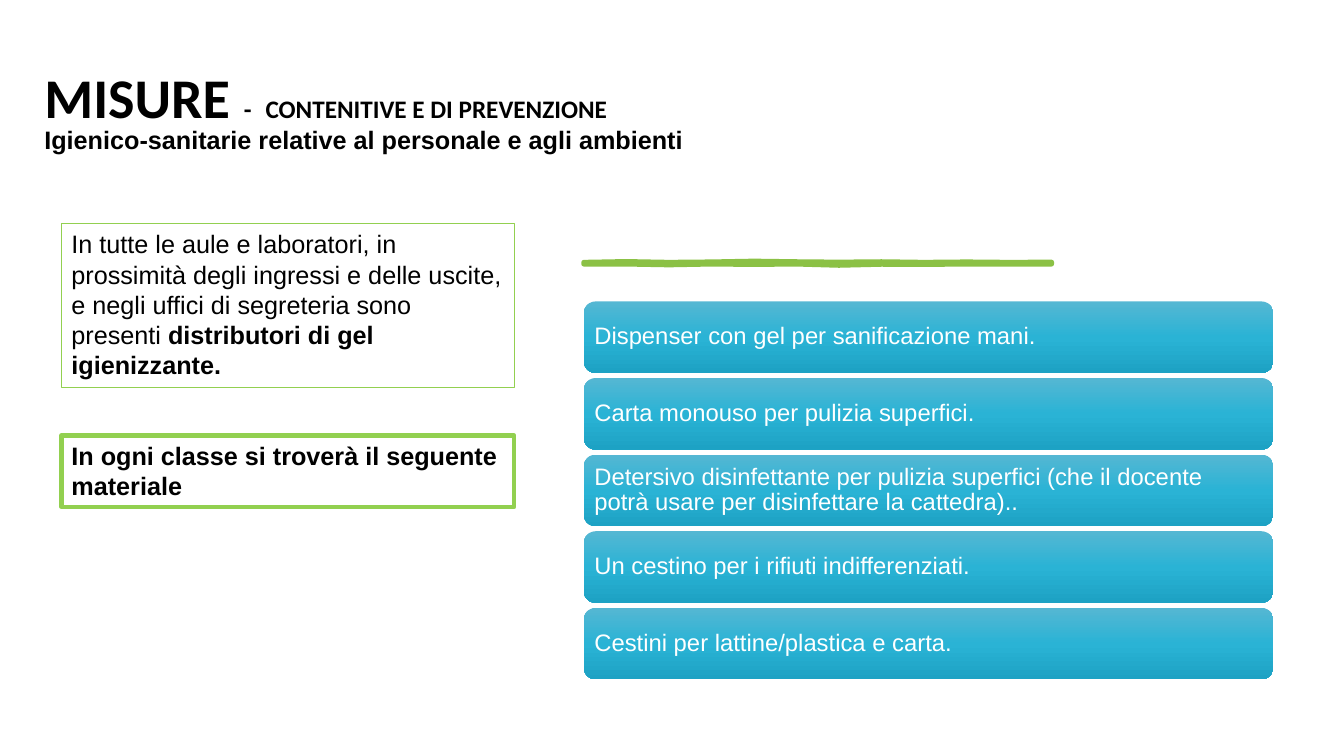
import copy

import pptx
import pptx.dml.color
import pptx.enum.shapes
import pptx.enum.text
import pptx.oxml.ns
import pptx.util
from pptx.util import Inches

COLORS = {
    "text": "000000",
    "white": "FFFFFF",
    "border": "92D050",
    "stroke": "8BC145",
    "card_top": "55B7D3",
    "card_middle": "2AB3D5",
    "card_bottom": "1DA2C4",
}
MATERIALS = [
    "Dispenser con gel per sanificazione mani.",
    "Carta monouso per pulizia superfici.",
    "Detersivo disinfettante per pulizia superfici (che il docente potrà usare per disinfettare la cattedra)..",
    "Un cestino per i rifiuti indifferenziati.",
    "Cestini per lattine/plastica e carta.",
]


def rgb(name):
    """Return the named palette colour."""
    return pptx.dml.color.RGBColor.from_string(COLORS[name])


def set_font(font, size, color="text", bold=False, name="Arial"):
    """Format a paragraph or run font."""
    font.name = name
    font.size = pptx.util.Pt(size)
    font.bold = bold
    font.color.rgb = rgb(color)


def place(shape, left, top, width, height):
    """Move a shape to the given box in inches."""
    shape.left, shape.top = Inches(left), Inches(top)
    shape.width, shape.height = Inches(width), Inches(height)


def add_title(slide, left, top, width, height):
    """Fill the title placeholder with the heading and its subtitle."""
    title = slide.shapes.title
    place(title, left, top, width, height)
    frame = title.text_frame
    frame.auto_size = pptx.enum.text.MSO_AUTO_SIZE.NONE
    frame.vertical_anchor = pptx.enum.text.MSO_ANCHOR.MIDDLE
    heading, subtitle = frame.paragraphs[0], frame.add_paragraph()
    for text, size in [("MISURE", 40), (" ", 44), ("-", 18), (" ", 44),
                       ("CONTENITIVE E DI PREVENZIONE", 18)]:
        run = heading.add_run()
        run.text = text
        set_font(run.font, size, bold=True, name="Calibri")
    subtitle.text = "Igienico-sanitarie relative al personale e agli ambienti"
    set_font(subtitle.font, 18, bold=True)
    for paragraph in frame.paragraphs:
        paragraph.alignment = pptx.enum.text.PP_ALIGN.LEFT
        paragraph.line_spacing = 0.8
        paragraph.space_before = pptx.util.Pt(0)


def add_note(slide, left, top, width, height, border, runs):
    """Add an outlined note whose runs are pairs of text and boldness."""
    note = slide.shapes.add_shape(
        pptx.enum.shapes.MSO_SHAPE.RECTANGLE,
        Inches(left), Inches(top), Inches(width), Inches(height))
    note.shadow.inherit = False
    note.fill.background()
    note.line.color.rgb = rgb("border")
    note.line.width = pptx.util.Pt(border)
    frame = note.text_frame
    frame.word_wrap = True
    frame.vertical_anchor = pptx.enum.text.MSO_ANCHOR.TOP
    paragraph = frame.paragraphs[0]
    paragraph.alignment = pptx.enum.text.PP_ALIGN.LEFT
    for text, bold in runs:
        run = paragraph.add_run()
        run.text = text
        set_font(run.font, 18, bold=bold)


def add_brush_stroke(slide, left, top, width, height):
    """Draw the uneven green rule."""
    upper = [0.1, -0.3, 0.1, -0.1, -0.5, -0.2, 0, -0.2, 0.1, -0.1, 0.1, 0]
    lower = [1, 1, 1.4, 1, 1.2, 1, 1.6, 1.1, 1.2, 1, 1, 1]
    step = width / (len(upper) - 1)
    edge = [(left + index * step, top + height * level)
            for index, level in enumerate(upper)]
    edge += [(left + index * step, top + height * level)
             for index, level in reversed(list(enumerate(lower)))]
    points = [(Inches(x), Inches(y)) for x, y in edge]
    builder = slide.shapes.build_freeform(*points[0])
    builder.add_line_segments(points[1:], close=True)
    stroke = builder.convert_to_shape()
    stroke.shadow.inherit = False
    stroke.fill.solid()
    stroke.fill.fore_color.rgb = rgb("stroke")
    stroke.line.color.rgb = rgb("stroke")
    stroke.line.width = pptx.util.Pt(3.5)


def fill_card(card):
    """Give a card its vertical gradient of three colours."""
    card.fill.gradient()
    card.fill.gradient_angle = 270
    stops = card._element.spPr.find(".//" + pptx.oxml.ns.qn("a:gsLst"))
    stops.insert(1, copy.deepcopy(stops[0]))
    names = ["card_top", "card_middle", "card_bottom"]
    for index, (stop, name) in enumerate(zip(card.fill.gradient_stops, names)):
        stop.position = index / 2
        stop.color.rgb = rgb(name)


def add_material_cards(slide, left, top, width, height, gap):
    """Stack one card per material evenly in the box."""
    card_height = (height - gap * (len(MATERIALS) - 1)) / len(MATERIALS)
    for index, text in enumerate(MATERIALS):
        card = slide.shapes.add_shape(
            pptx.enum.shapes.MSO_SHAPE.ROUNDED_RECTANGLE,
            Inches(left), Inches(top + index * (card_height + gap)),
            Inches(width), Inches(card_height))
        card.shadow.inherit = False
        card.line.fill.background()
        fill_card(card)
        frame = card.text_frame
        frame.word_wrap = True
        frame.vertical_anchor = pptx.enum.text.MSO_ANCHOR.MIDDLE
        frame.margin_left = frame.margin_right = Inches(0.07)
        paragraph = frame.paragraphs[0]
        paragraph.text = text
        paragraph.alignment = pptx.enum.text.PP_ALIGN.LEFT
        paragraph.line_spacing = 0.9
        set_font(paragraph.font, 17, "white")


def main():
    """Build and save the slide."""
    presentation = pptx.Presentation()
    presentation.slide_width = Inches(13.33)
    presentation.slide_height = Inches(7.5)
    slide = presentation.slides.add_slide(presentation.slide_layouts[5])
    add_title(slide, 0.34, 0.62, 11.96, 0.99)
    add_note(slide, 0.61, 2.22, 4.49, 1.62, 0.75, [
        ("In tutte le aule e laboratori, in prossimità degli ingressi e delle uscite, "
         "e negli uffici di segreteria sono presenti ", False),
        ("distributori di gel igienizzante.", True)])
    add_note(slide, 0.61, 4.32, 4.49, 0.71, 3, [
        ("In ogni classe si troverà il seguente materiale", True)])
    add_brush_stroke(slide, 5.79, 2.6, 4.64, 0.02)
    add_material_cards(slide, 5.79, 2.99, 6.84, 3.75, 0.05)
    presentation.save("out.pptx")


if __name__ == "__main__":
    main()
